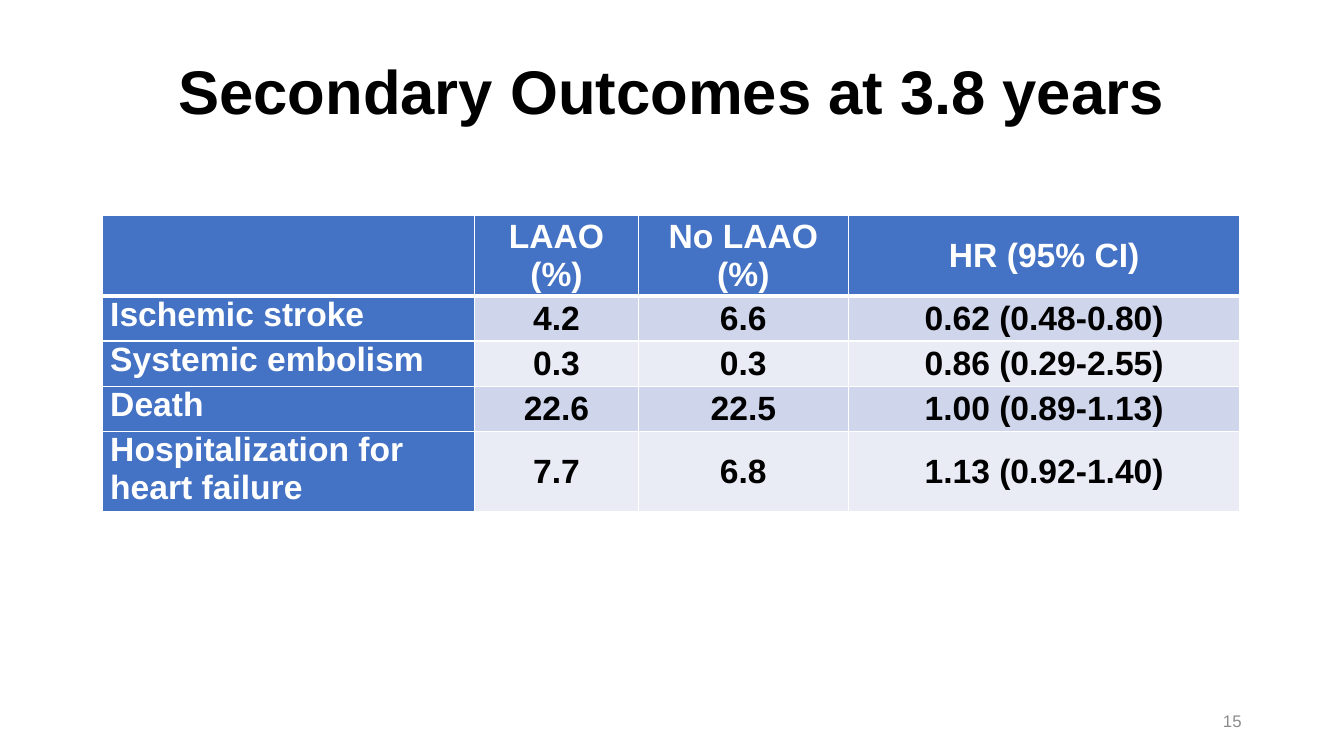
from pptx import Presentation
from pptx.dml.color import RGBColor
from pptx.enum.text import MSO_ANCHOR as Anchor, PP_ALIGN as Align
from pptx.oxml import parse_xml
from pptx.oxml.ns import nsdecls
from pptx.util import Pt

PX = 9525  # EMU per px, 96 px to the inch
WHITE, BLACK, BLUE, NAVY, GREY = "FFFFFF", "000000", "4472C4", "002060", "8C8C8C"
BANDS = ["CFD5EA", "E9EBF5"]
COLS = [354, 156, 200, 373]
ROW = 43
ROWS = [
    ["", "LAAO (%)", "No LAAO (%)", "HR (95% CI)"],
    ["Ischemic stroke", "4.2", "6.6", "0.62 (0.48-0.80)"],
    ["Systemic embolism", "0.3", "0.3", "0.86 (0.29-2.55)"],
    ["Death", "22.6", "22.5", "1.00 (0.89-1.13)"],
    ["Hospitalization for heart failure", "7.7", "6.8", "1.13 (0.92-1.40)"],
]


def px(*sizes):
    return [size * PX for size in sizes]


def color(code):
    return RGBColor.from_string(code)


def line(tag, code, width):
    return parse_xml(
        f'<a:{tag} {nsdecls("a")} w="{int(Pt(width))}"><a:solidFill>'
        f'<a:srgbClr val="{code}"/></a:solidFill></a:{tag}>')


def write(frame, text, code, align, **font):
    para = frame.paragraphs[0]
    para.alignment = align
    run = para.add_run()
    run.text = text
    for name, value in {"name": "Arial", **font}.items():
        setattr(run.font, name, value)
    run.font.color.rgb = color(code)
    return para, run


def add_text(slide, box, *args, **font):
    frame = slide.shapes.add_textbox(*px(*box)).text_frame
    frame.word_wrap = True
    frame.vertical_anchor = Anchor.MIDDLE
    return write(frame, *args, **font)


def add_title(slide, box):
    para, run = add_text(slide, box, "Secondary Outcomes at 3.8 years",
                         BLACK, Align.CENTER, size=Pt(44), bold=True)
    para.line_spacing = 0.9
    # Thin outline around the letters
    run.font._element.insert(0, line("ln", NAVY, 0.75))


def style_cell(cell, row, col):
    label = col == 0 and row > 0
    cell.vertical_anchor = Anchor.TOP if label else Anchor.MIDDLE
    margins = {"left": 7, "right": 7, "top": 0, "bottom": 0}
    for side, size in margins.items():
        setattr(cell, f"margin_{side}", size * PX)
    # White grid, heavier under the header
    widths = {"lnL": 1, "lnR": 1, "lnT": 3 if row == 1 else 1,
              "lnB": 3 if row == 0 else 1}
    props = cell._tc.get_or_add_tcPr()
    for tag, width in widths.items():
        props.append(line(tag, WHITE, width))
    head = row == 0 or col == 0
    cell.fill.solid()
    cell.fill.fore_color.rgb = color(BLUE if head else BANDS[(row - 1) % 2])
    text = ROWS[row][col]
    if text:
        write(cell.text_frame, text, WHITE if head else BLACK,
              Align.LEFT if label else Align.CENTER, size=Pt(24), bold=True)


def add_grid(slide, left, top):
    box = px(left, top, sum(COLS), ROW * len(ROWS))
    table = slide.shapes.add_table(len(ROWS), len(COLS), *box).table
    for col, width in zip(table.columns, COLS):
        col.width = width * PX
    for row in range(len(ROWS)):
        table.rows[row].height = ROW * PX
        for col in range(len(COLS)):
            style_cell(table.cell(row, col), row, col)


def main():
    deck = Presentation()
    deck.slide_width, deck.slide_height = px(1280, 720)
    slide = deck.slides.add_slide(deck.slide_layouts[6])
    add_title(slide, (88, 21, 1104, 139))
    # Page number
    add_text(slide, (904, 667, 288, 38), "15", GREY, Align.RIGHT, size=Pt(12))
    add_grid(slide, 98, 205)
    deck.save("out.pptx")


if __name__ == "__main__":
    main()
